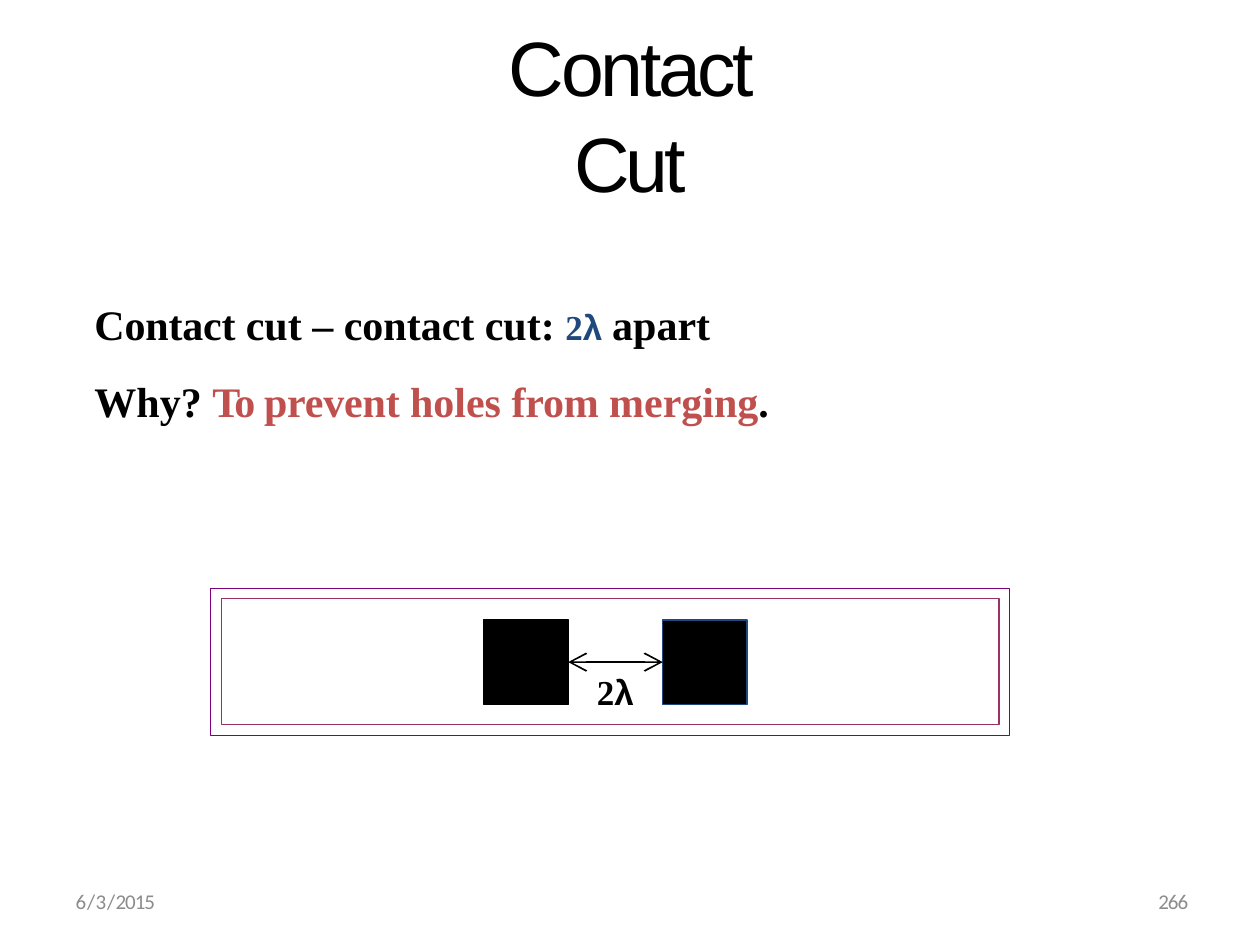
from dataclasses import dataclass

from lxml import etree
from pptx import Presentation
from pptx.dml.color import RGBColor
from pptx.enum.shapes import MSO_CONNECTOR, MSO_SHAPE
from pptx.enum.text import MSO_ANCHOR, PP_ALIGN
from pptx.oxml.ns import qn
from pptx.util import Inches, Pt

RECT = MSO_SHAPE.RECTANGLE
LINE = MSO_CONNECTOR.STRAIGHT
TOP, MID = MSO_ANCHOR.TOP, MSO_ANCHOR.MIDDLE
LEFT, CENTER, RIGHT = PP_ALIGN.LEFT, PP_ALIGN.CENTER, PP_ALIGN.RIGHT


@dataclass(frozen=True)
class Theme:
    black: str = "000000"
    blue: str = "1F487C"
    red: str = "C0504D"
    gray: str = "8C8C8C"
    purple: str = "7F007F"
    plum: str = "983265"
    sans: str = "Arial"
    serif: str = "Times New Roman"
    foot: str = "Calibri"
    head: int = 44
    body: int = 24
    label: int = 20
    small: int = 12
    edge: float = 0.75


T = Theme()


def color(code):
    return RGBColor.from_string(code)


def write(para, runs, size, face, bold=False):
    """Fill a paragraph; each run is (text, spacing, changes)."""
    for text, gap, diff in runs:
        run = para.add_run()
        run.text = text
        font = run.font
        font.size = Pt(diff.get("size", size))
        font.name = diff.get("face", face)
        font.bold = bold
        font.color.rgb = color(diff.get("color", T.black))
        if gap:
            run._r.get_or_add_rPr().set("spc", str(round(gap * 100)))


def set_frame(frame, anchor=TOP, left=0, top=0, right=0, bottom=0):
    frame.word_wrap = True
    frame.vertical_anchor = anchor
    frame.margin_left, frame.margin_top = Inches(left), Inches(top)
    frame.margin_right, frame.margin_bottom = Inches(right), Inches(bottom)


def add_text(slide, box, lines, size, face, bold=False, align=LEFT,
             space=None, before=0, **inset):
    frame = slide.shapes.add_textbox(*map(Inches, box)).text_frame
    set_frame(frame, **inset)
    for i, runs in enumerate(lines):
        para = frame.add_paragraph() if i else frame.paragraphs[0]
        para.alignment = align
        para.line_spacing = space
        para.space_before = Pt(before)
        write(para, runs, size, face, bold)


def add_rect(slide, box, edge, fill=None):
    rect = slide.shapes.add_shape(RECT, *map(Inches, box))
    rect.shadow.inherit = False
    if fill:
        rect.fill.solid()
        rect.fill.fore_color.rgb = color(fill)
    else:
        rect.fill.background()
    rect.line.color.rgb = color(edge)
    rect.line.width = Pt(T.edge)
    return rect


def add_arrow(slide, start, end):
    """Double arrow from the right side of one square to the left of another."""
    arrow = slide.shapes.add_connector(LINE, 0, 0, 0, 0)
    arrow.begin_connect(start, 3)
    arrow.end_connect(end, 1)
    arrow.line.color.rgb = color(T.black)
    arrow.line.width = Pt(1)
    line = arrow.line._get_or_add_ln()
    for tag in ("a:headEnd", "a:tailEnd"):
        etree.SubElement(line, qn(tag), type="arrow", w="lg", len="lg")
    etree.SubElement(arrow._element.spPr, qn("a:effectLst"))


def add_diagram(slide):
    # Two contact cuts, 2λ apart
    side, gap = 0.67, 0.75
    cuts = [add_rect(slide, (3.84 + i * (side + gap), 4.92, side, side),
                     edge, T.black)
            for i, edge in enumerate((T.black, T.blue))]
    add_arrow(slide, *cuts)

    # Frames around them, the inner one with the label
    add_rect(slide, (1.67, 4.67, 6.34, 1.17), T.purple)
    inner = add_rect(slide, (1.76, 4.75, 6.17, 1), T.plum)
    set_frame(inner.text_frame, left=0.08, top=0.57)
    para = inner.text_frame.paragraphs[0]
    para.alignment = CENTER
    write(para, [("2", 0, {}), ("λ", 0, {"face": T.sans})],
          T.label, T.serif, True)


def main():
    deck = Presentation()
    deck.slide_width, deck.slide_height = Inches(10), Inches(7.5)
    slide = deck.slides.add_slide(deck.slide_layouts[6])

    # Title
    add_text(slide, (3.53, 0.5, 2.94, 0.76),
             [[("Contact ", -1.9, {}), ("Cut", -2.5, {})]],
             T.head, T.sans, align=CENTER, space=1.04, before=1.1,
             anchor=MID, left=0.05, top=0.01, right=0.05)

    # Rule and reason
    blue = {"color": T.blue, "size": T.label}
    red = {"color": T.red}
    add_text(slide, (0.75, 2.16, 5.43, 1.23),
             [[("Contact ", -0.1, {}), ("cut – contact cut: ", 0, {}),
               ("2", 0, blue), ("λ ", 0, {**blue, "face": T.sans}),
               ("apart", 0, {})],
              [("Why? ", 0, {}), ("To ", -1.1, red),
               ("prevent ", -0.1, red), ("holes ", 0, red),
               ("from ", -0.1, red), ("merging", 0, red), (".", 0, {})]],
             T.body, T.serif, True, space=1.5, before=1, top=0.01)

    add_diagram(slide)

    # Date and slide number
    gray = {"color": T.gray}
    add_text(slide, (0.59, 7.07, 0.67, 0.19),
             [[("6", 0.5, gray), ("/", 0.2, gray), ("3", 0.5, gray),
               ("/", 0.2, gray), ("2015", -0.6, gray)]],
             T.small, T.foot, space=Pt(12.4), anchor=MID, left=0.01)
    add_text(slide, (9.12, 7.01, 0.31, 0.26), [[("266", -0.6, gray)]],
             T.small, T.foot, align=RIGHT, space=Pt(12.4),
             anchor=MID, top=0.06)

    deck.save("out.pptx")


if __name__ == "__main__":
    main()
